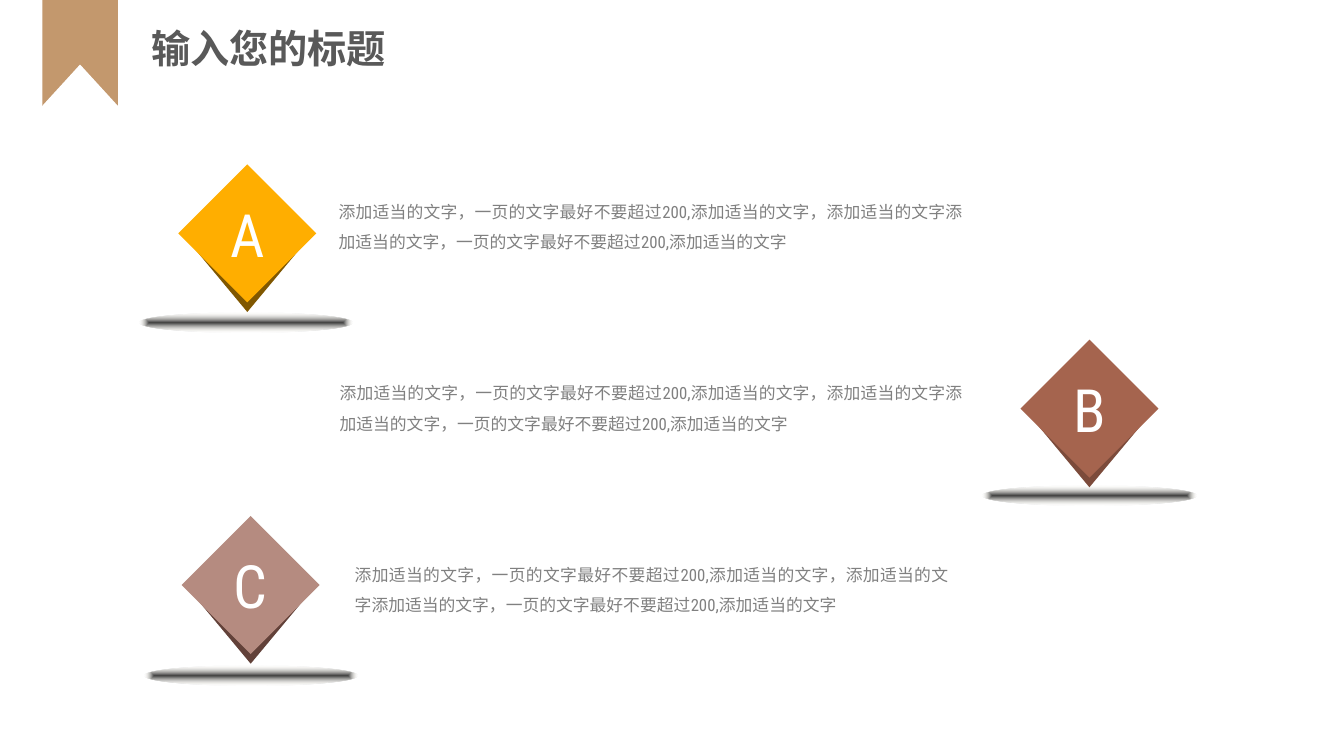
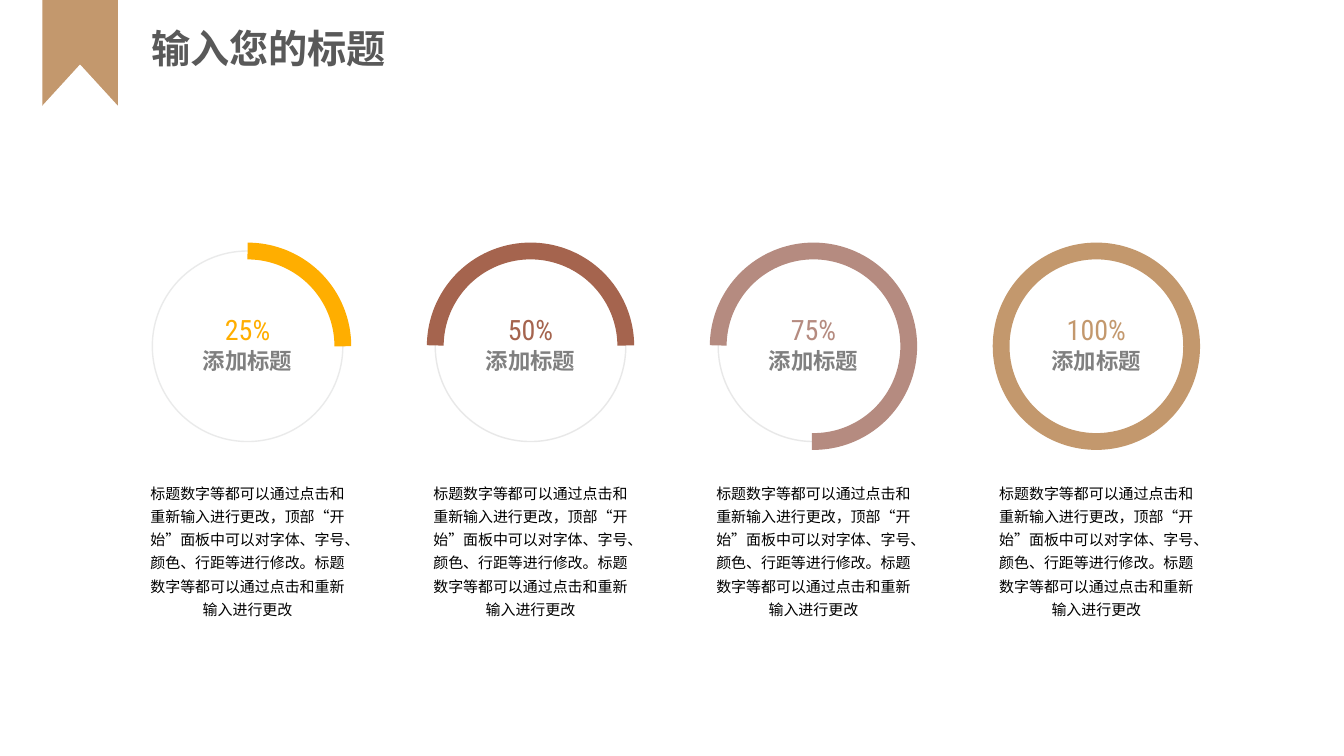
import pptx
import pptx.util
import pptx.oxml
import pptx.oxml.ns
import pptx.dml.color
import pptx.enum.lang
import pptx.enum.shapes
import pptx.enum.text
from lxml import etree

Pt = pptx.util.Pt
FORM = pptx.enum.shapes.MSO_SHAPE
ALIGN = pptx.enum.text.PP_ALIGN
MIDDLE = pptx.enum.text.MSO_ANCHOR.MIDDLE
GROW = pptx.enum.text.MSO_AUTO_SIZE.SHAPE_TO_FIT_TEXT
LANG = pptx.enum.lang.MSO_LANGUAGE_ID.SIMPLIFIED_CHINESE
qn = pptx.oxml.ns.qn

HAN = "Noto Sans CJK SC"
LATIN = "Roboto Condensed"
HEX = {
    "tan": "C3986D", "white": "FFFFFF", "title": "595959", "grey": "808080",
    "black": "000000", "gold": "FFAE00", "rust": "A5644E", "rose": "B58B80",
    "gold dark": "805700", "rust dark": "7C4B3B", "rose dark": "624139",
    "mist": "DCDDDD", "pale": "D9D9D9", "shade": "404040", "cream": "EEECE1",
}

TITLE = "输入您的标题"
BODY = ("添加适当的文字，一页的文字最好不要超过200,添加适当的文字，"
        "添加适当的文字添加适当的文字，一页的文字最好不要超过200,添加适当的文字")
LABEL = "添加标题"
NOTE = ("标题数字等都可以通过点击和重新输入进行更改，顶部“开始”面板中可以对字体、"
        "字号、颜色、行距等进行修改。标题数字等都可以通过点击和重新输入进行更改")

BADGES = [
    ("A", "gold", (127.4, 117.4), (99.4, 223.2), (231.1, 131.8, 467.3)),
    ("B", "rust", (728.9, 242.6), (702, 347), (231.8, 261.4, 466.6)),
    ("C", "rose", (129.8, 368.6), (103, 475.2), (242.6, 391, 445.7)),
]
RINGS = [
    ("25%", "gold", "mist", 270, 0),
    ("50%", "rust", "pale", 180.5, 359.55),
    ("75%", "rose", "pale", 180.5, 90.92),
    ("100%", "tan", "white", 180.5, 180.47),
]


def tint(name):
    return pptx.dml.color.RGBColor.from_string(HEX[name])


def shape(slide, form, box, fill=None, line=None, width=1):
    item = slide.shapes.add_shape(form, *map(Pt, box))
    item.shadow.inherit = False
    if fill:
        item.fill.solid()
        item.fill.fore_color.rgb = tint(fill)
    else:
        item.fill.background()
    if line:
        item.line.color.rgb = tint(line)
        item.line.width = Pt(width)
    else:
        item.line.fill.background()
    return item


def write(frame, rows, align, space=None, pad=(7.2, 3.6)):
    frame.word_wrap = True
    frame.margin_left = frame.margin_right = Pt(pad[0])
    frame.margin_top = frame.margin_bottom = Pt(pad[1])
    frame.text = "\n".join(row[0] for row in rows)
    for para, (text, size, color, face, bold) in zip(frame.paragraphs, rows):
        para.alignment = align
        para.line_spacing = space
        font = para.runs[0].font
        font.size = Pt(size)
        font.bold = bold
        font.color.rgb = tint(color)
        font.name = face
        font.language_id = LANG
        latin = font._element.find(qn("a:latin"))
        east = etree.Element(qn("a:ea"), typeface=HAN)
        latin.addnext(east)


def textbox(slide, box, row, align, space=None, pad=(7.2, 3.6)):
    frame = slide.shapes.add_textbox(*map(Pt, box)).text_frame
    write(frame, [row], align, space, pad)
    frame.auto_size = GROW


def shadow(slide, spot):
    item = shape(slide, FORM.OVAL, (*spot, 152.6, 14.4))
    none = item._element.spPr.find(qn("a:noFill"))
    grad = pptx.oxml.parse_xml(
        f'<a:gradFill {pptx.oxml.ns.nsdecls("a")} rotWithShape="1"><a:gsLst>'
        f'<a:gs pos="0"><a:srgbClr val="{HEX["shade"]}"/></a:gs>'
        f'<a:gs pos="100000"><a:srgbClr val="{HEX["cream"]}">'
        '<a:alpha val="0"/></a:srgbClr></a:gs></a:gsLst><a:path path="shape">'
        '<a:fillToRect l="50000" t="50000" r="50000" b="50000"/>'
        '</a:path></a:gradFill>')
    none.getparent().replace(none, grad)


def badge(slide, letter, color, spot, base, area):
    left, top = spot
    side, slim, drop = 98.6, 82.1, 6.9
    shadow(slide, base)
    shape(slide, FORM.DIAMOND,
          (left + (side - slim) / 2, top + drop, slim, side), color + " dark")
    front = shape(slide, FORM.DIAMOND, (left, top, side, side), color)
    write(front.text_frame, [(letter, 42.6, "white", LATIN, False)],
          ALIGN.CENTER, pad=(0, 0))
    front.text_frame.vertical_anchor = MIDDLE
    textbox(slide, (*area, 51.8), (BODY, 12, "grey", LATIN, False),
            ALIGN.JUSTIFY, 1.5, (10.8, 5))


def ring(slide, index, share, color, track, start, end):
    left, top, side, pad = 108.8 + 202.1 * index, 179.3, 136.1, (9.4, 5)
    box = left, top, side, side
    disc = shape(slide, FORM.OVAL, box, line=track)
    ink = disc.line._ln.find(".//" + qn("a:srgbClr"))
    etree.SubElement(ink, qn("a:alpha"), val="60000")
    write(disc.text_frame, [(share, 20, color, LATIN, False),
                            (LABEL, 16, "grey", LATIN, True)],
          ALIGN.CENTER, Pt(19.5), pad)
    disc.text_frame.vertical_anchor = MIDDLE
    arc = shape(slide, FORM.ARC, box, line=color, width=12)
    arc.adjustments[0] = start * 0.6
    arc.adjustments[1] = end * 0.6
    textbox(slide, (left - 14.4, 337, 164.9, 110.2),
            (NOTE, 10.7, "black", LATIN, False), ALIGN.CENTER, 1.3, pad)


def page(deck):
    slide = deck.slides.add_slide(deck.slide_layouts[6])
    shape(slide, FORM.RECTANGLE, (30.2, -0.7, 54, 76.3), "tan")
    shape(slide, FORM.ISOSCELES_TRIANGLE, (30.2, 46.1, 54, 29.5), "white")
    textbox(slide, (100.8, 13.7, 223.9, 41),
            (TITLE, 28, "title", HAN, True), ALIGN.LEFT)
    return slide


def main():
    deck = pptx.Presentation()
    deck.slide_width, deck.slide_height = Pt(960), Pt(540)
    slide = page(deck)
    for entry in BADGES:
        badge(slide, *entry)
    slide = page(deck)
    for index, entry in enumerate(RINGS):
        ring(slide, index, *entry)
    deck.save("out.pptx")


if __name__ == "__main__":
    main()
